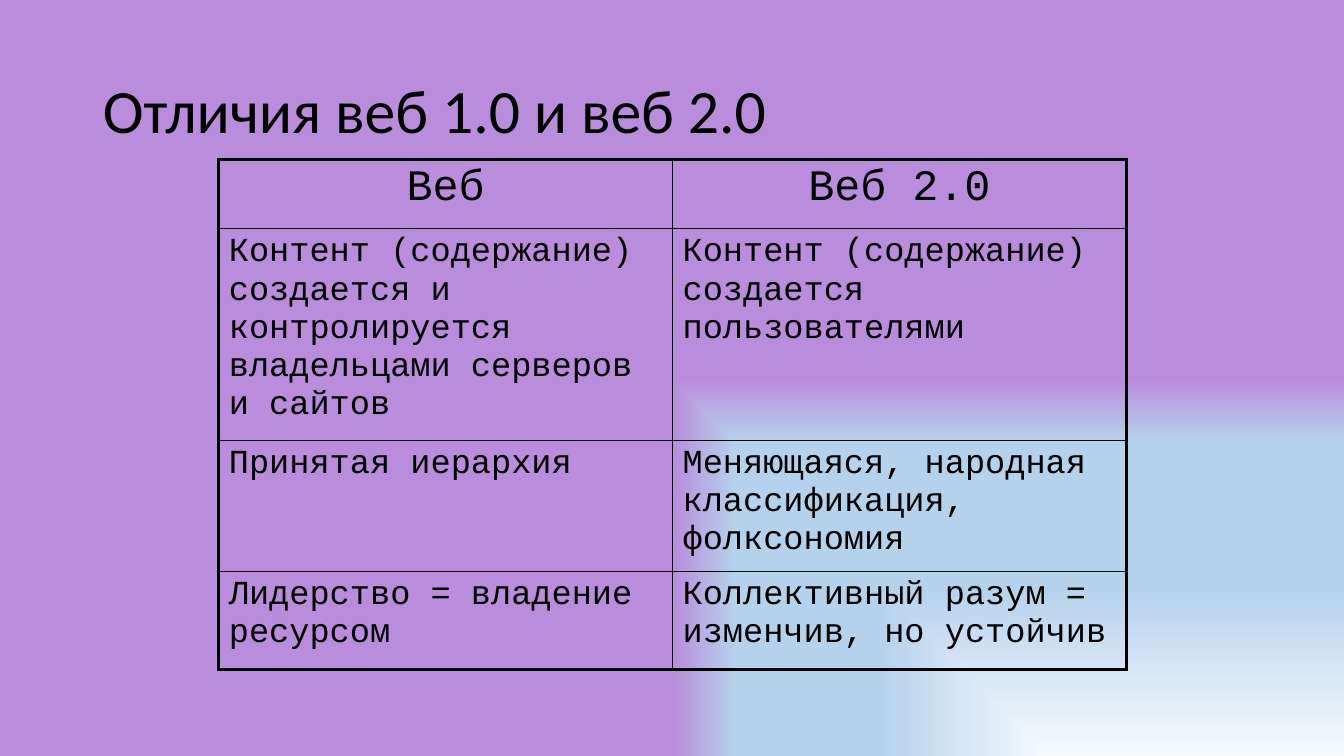
import pptx
import pptx.util
import pptx.oxml
import pptx.oxml.ns
import pptx.dml.color
import pptx.enum.text
import lxml.etree

Inches = pptx.util.Inches
BLACK = "000000"
THIN, THICK = 1, 2.25
BACKGROUND_STOPS = [(0, "F7FAFD"), (45, "B5D2EC"), (83, "B5D2EC"), (100, "BA8CDC")]
ROW_HEIGHTS = [0.69, 2.1, 1.3, 0.97]
COMPARISON = [
    ("Веб", "Веб 2.0"),
    ("Контент (содержание) создается и контролируется владельцами серверов и сайтов",
     "Контент (содержание) создается пользователями"),
    ("Принятая иерархия", "Меняющаяся, народная классификация, фолксономия"),
    ("Лидерство = владение ресурсом", "Коллективный разум = изменчив, но устойчив"),
]


def color(value):
    return pptx.dml.color.RGBColor.from_string(value)


def format_text(para, font_name, size, alignment):
    para.alignment = alignment
    for span in para.runs:
        span.font.name = font_name
        span.font.size = pptx.util.Pt(size)
        span.font.bold = False
        span.font.color.rgb = color(BLACK)


def paint_background(page):
    stops = "".join(
        f'<a:gs pos="{position * 1000}"><a:srgbClr val="{value}"/></a:gs>'
        for position, value in BACKGROUND_STOPS
    )
    page.element.cSld.insert(0, pptx.oxml.parse_xml(
        f'<p:bg {pptx.oxml.ns.nsdecls("p", "a")}><p:bgPr>'
        f'<a:gradFill rotWithShape="1"><a:gsLst>{stops}</a:gsLst>'
        '<a:path path="rect"><a:fillToRect l="100000" t="100000"/></a:path>'
        '</a:gradFill><a:effectLst/></p:bgPr></p:bg>'
    ))


def place_title(page, left, top, width, height):
    title = page.shapes.title
    title.left, title.top = Inches(left), Inches(top)
    title.width, title.height = Inches(width), Inches(height)
    frame = title.text_frame
    frame.text = "Отличия веб 1.0 и веб 2.0"
    frame.word_wrap = True
    frame.auto_size = pptx.enum.text.MSO_AUTO_SIZE.NONE
    frame.vertical_anchor = pptx.enum.text.MSO_ANCHOR.MIDDLE
    para = frame.paragraphs[0]
    para.line_spacing = 0.9
    format_text(para, "Calibri", 44, pptx.enum.text.PP_ALIGN.LEFT)


def draw_borders(cell, widths):
    properties = cell._tc.get_or_add_tcPr()
    for index, (side, width) in enumerate(widths.items()):
        line = pptx.oxml.parse_xml(
            f'<a:ln{side} {pptx.oxml.ns.nsdecls("a")} w="{pptx.util.Pt(width)}">'
            f'<a:solidFill><a:srgbClr val="{BLACK}"/></a:solidFill></a:ln{side}>'
        )
        properties.insert(index, line)


def place_comparison(page, left, top, width, height):
    row_count, column_count = len(COMPARISON), len(COMPARISON[0])
    table = page.shapes.add_table(
        row_count, column_count, Inches(left), Inches(top), Inches(width), Inches(height)
    ).table
    table.first_row = False
    table.horz_banding = False
    for column in table.columns:
        column.width = Inches(width / column_count)
    for row_index, texts in enumerate(COMPARISON):
        table.rows[row_index].height = Inches(ROW_HEIGHTS[row_index])
        header = row_index == 0
        for column_index, text in enumerate(texts):
            cell = table.cell(row_index, column_index)
            cell.text_frame.text = text
            alignment = pptx.enum.text.PP_ALIGN.CENTER if header else pptx.enum.text.PP_ALIGN.LEFT
            format_text(cell.text_frame.paragraphs[0], "Courier New", 31 if header else 24, alignment)
            cell.fill.background()
            draw_borders(cell, {
                "L": THICK if column_index == 0 else THIN,
                "R": THICK if column_index == column_count - 1 else THIN,
                "T": THICK if header else THIN,
                "B": THICK if row_index == row_count - 1 else THIN,
            })


def main():
    deck = pptx.Presentation()
    deck.slide_width, deck.slide_height = Inches(13.33), Inches(7.5)
    page = deck.slides.add_slide(deck.slide_layouts[5])
    paint_background(page)
    place_title(page, 0.92, 0.4, 11.5, 1.45)
    place_comparison(page, 2.17, 1.58, 9, sum(ROW_HEIGHTS))
    deck.save("out.pptx")


if __name__ == "__main__":
    main()
